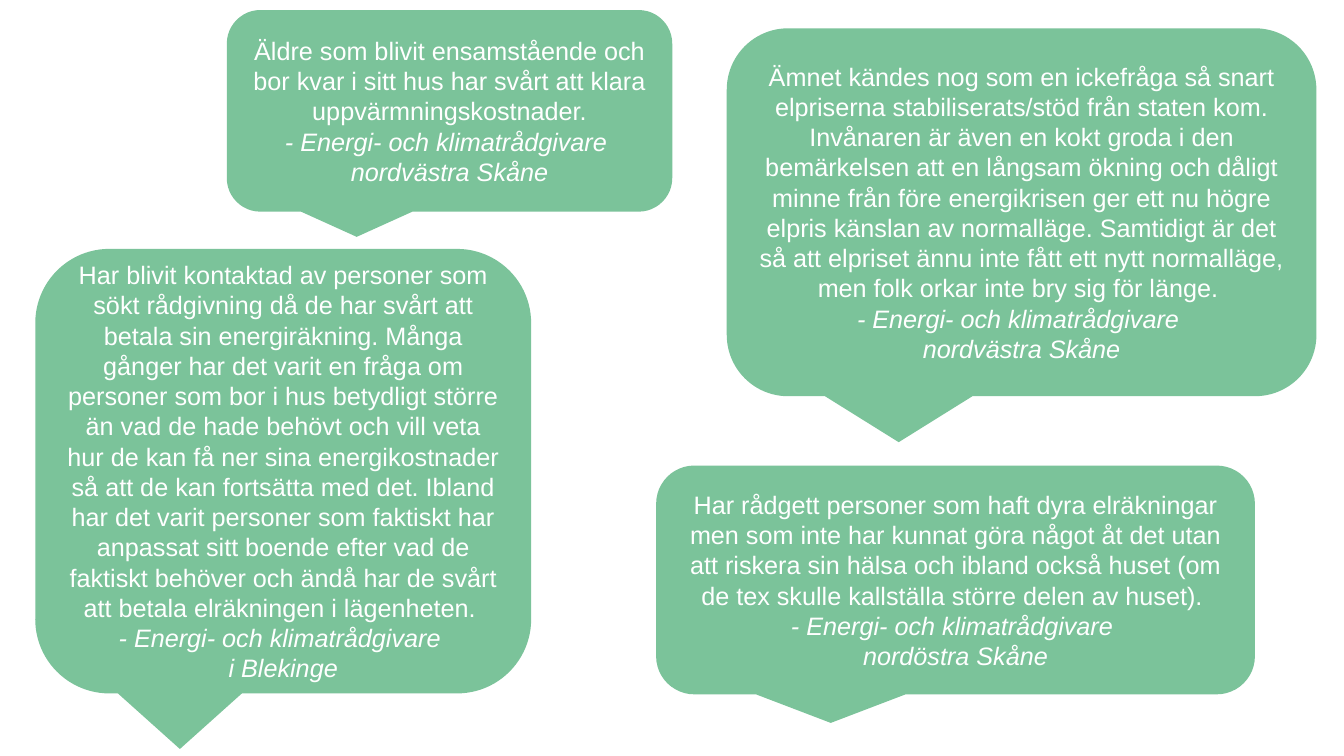
"""Build a slide with four quotes from energy advisers in speech bubbles."""
from dataclasses import dataclass

import pptx
import pptx.dml.color
import pptx.enum.shapes
import pptx.enum.text
import pptx.util

Pt = pptx.util.Pt
RGB = pptx.dml.color.RGBColor


@dataclass(frozen=True)
class Theme:
    bubble: RGB = RGB(0x7B, 0xC3, 0x9A)
    text: RGB = RGB(0xFF, 0xFF, 0xFF)
    font: str = "Arial"
    size: int = 18


THEME = Theme()
ADVISER = "- Energi- och klimatrådgivare "

QUOTES = [
    ((519.1, 20.2, 421.2, 262.8),
     "Ämnet kändes nog som en ickefråga så snart elpriserna "
     "stabiliserats/stöd från staten kom. Invånaren är även en kokt groda i "
     "den bemärkelsen att en långsam ökning och dåligt minne från före "
     "energikrisen ger ett nu högre elpris känslan av normalläge. Samtidigt "
     "är det så att elpriset ännu inte fått ett nytt normalläge, men folk "
     "orkar inte bry sig för länge. ",
     "nordvästra Skåne"),
    ((162, 7.2, 318.2, 144),
     "Äldre som blivit ensamstående och bor kvar i sitt hus har svårt att "
     "klara uppvärmningskostnader.",
     "nordvästra Skåne"),
    ((25.2, 177.8, 354.2, 317.5),
     "Har blivit kontaktad av personer som sökt rådgivning då de har svårt "
     "att betala sin energiräkning. Många gånger har det varit en fråga om "
     "personer som bor i hus betydligt större än vad de hade behövt och vill "
     "veta hur de kan få ner sina energikostnader så att de kan fortsätta "
     "med det. Ibland har det varit personer som faktiskt har anpassat sitt "
     "boende efter vad de faktiskt behöver och ändå har de svårt att betala "
     "elräkningen i lägenheten. ",
     "i Blekinge"),
    ((468.7, 332.6, 427.7, 163.4),
     "Har rådgett personer som haft dyra elräkningar men som inte har kunnat "
     "göra något åt det utan att riskera sin hälsa och ibland också huset "
     "(om de tex skulle kallställa större delen av huset). ",
     "nordöstra Skåne"),
]


def format_paragraph(p, text, italic=False):
    """Fill a paragraph with centred text in the theme font."""
    p.text = text
    p.alignment = pptx.enum.text.PP_ALIGN.CENTER
    p.font.name = THEME.font
    p.font.size = Pt(THEME.size)
    p.font.italic = italic
    p.font.color.rgb = THEME.text


def add_bubble(slide, box, quote, region):
    """Add a speech bubble with a quote and the adviser's region."""
    sp = slide.shapes.add_shape(
        pptx.enum.shapes.MSO_SHAPE.ROUNDED_RECTANGULAR_CALLOUT,
        *(Pt(length) for length in box))
    sp.shadow.inherit = False
    sp.fill.solid()
    sp.fill.fore_color.rgb = THEME.bubble
    sp.line.fill.background()
    tf = sp.text_frame
    tf.word_wrap = True
    tf.vertical_anchor = pptx.enum.text.MSO_ANCHOR.MIDDLE
    format_paragraph(tf.paragraphs[0], quote)
    format_paragraph(tf.add_paragraph(), f"{ADVISER}\n{region}", italic=True)


def main():
    """Build and save the presentation."""
    prs = pptx.Presentation()
    prs.slide_width, prs.slide_height = Pt(960), Pt(540)
    slide = prs.slides.add_slide(prs.slide_layouts[6])
    for box, quote, region in QUOTES:
        add_bubble(slide, box, quote, region)
    prs.save("out.pptx")


if __name__ == "__main__":
    main()
